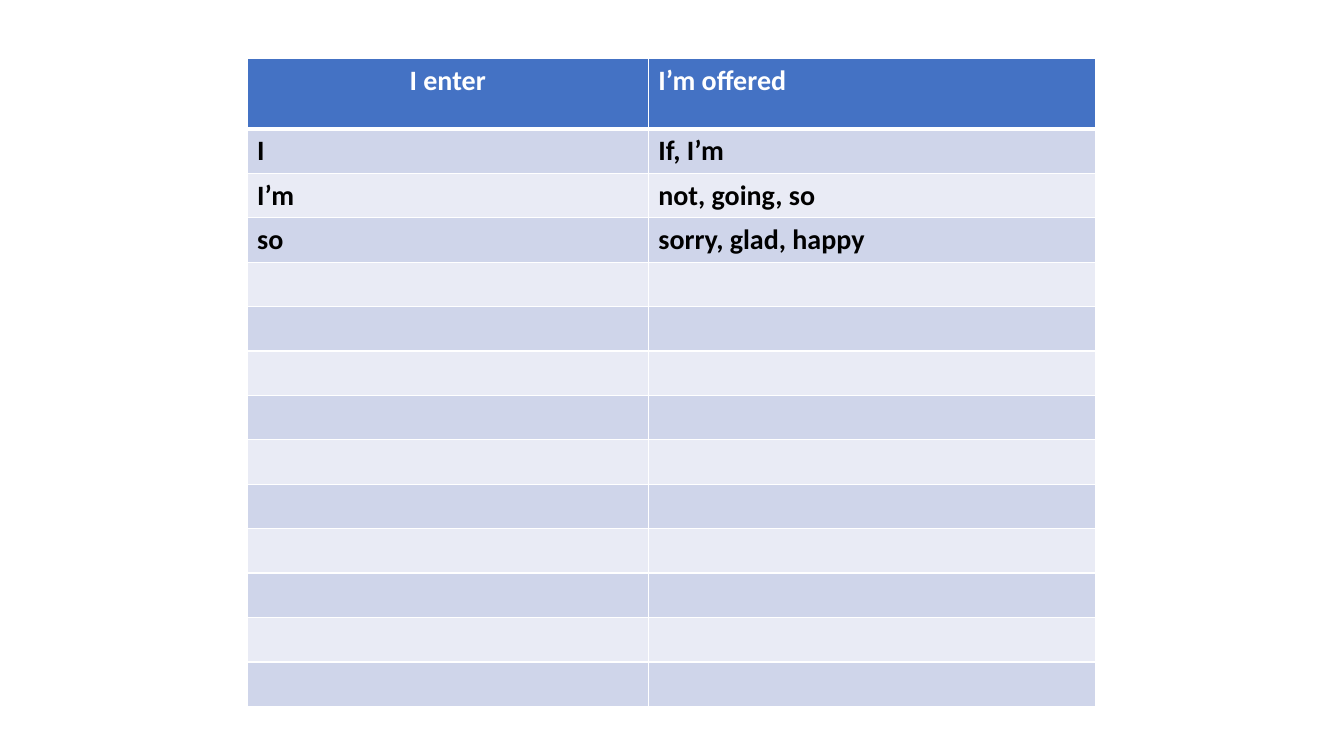
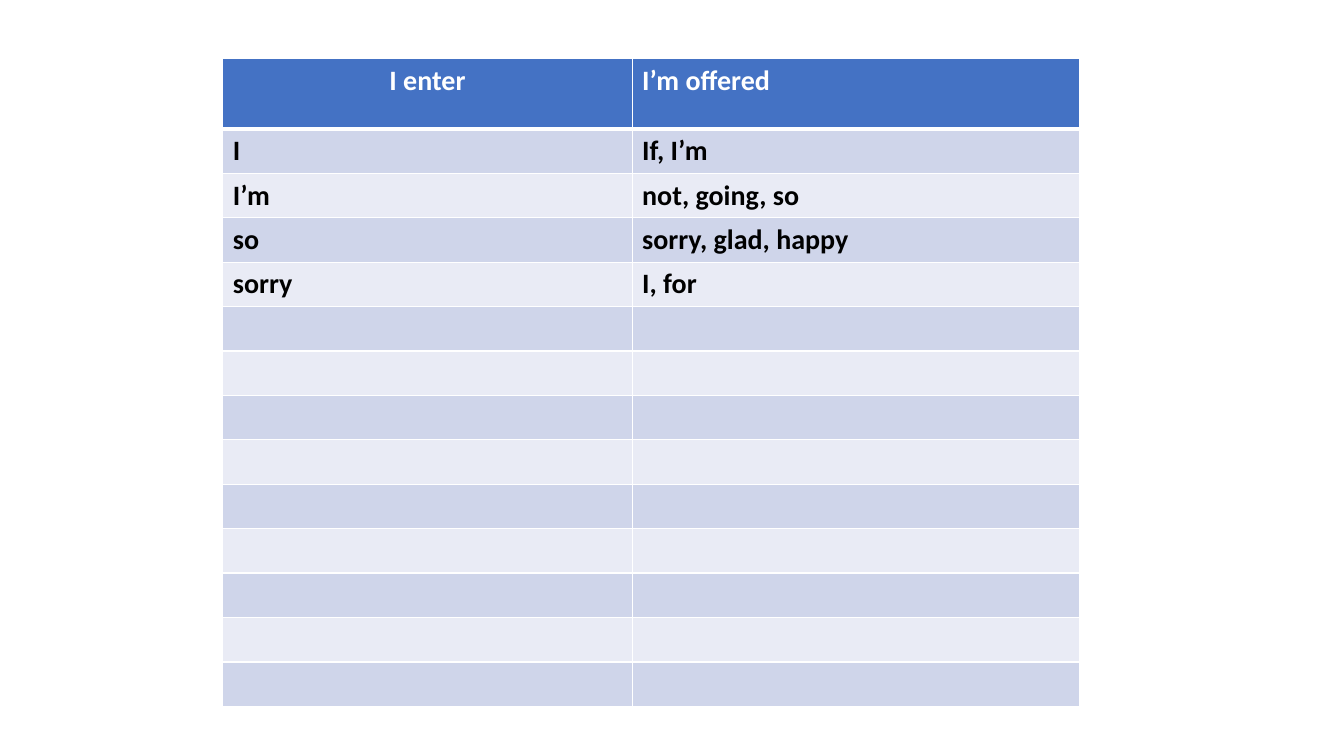
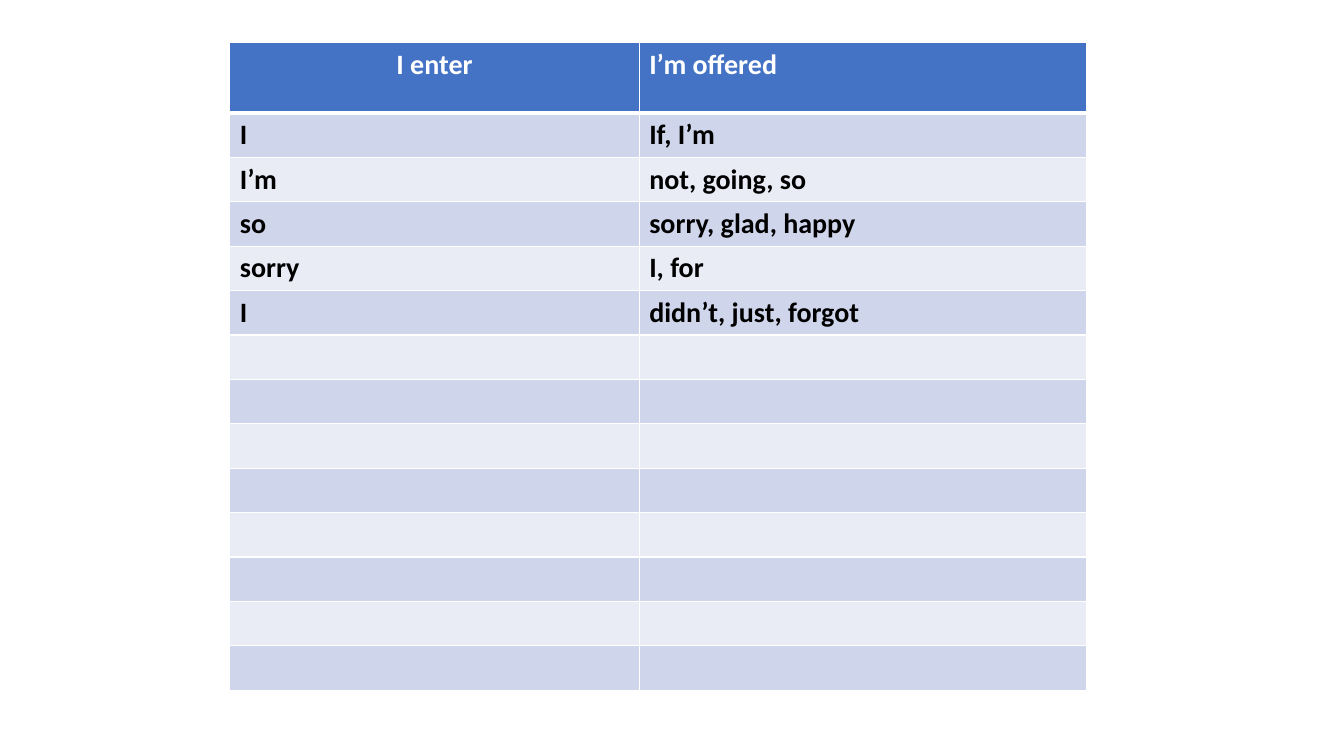
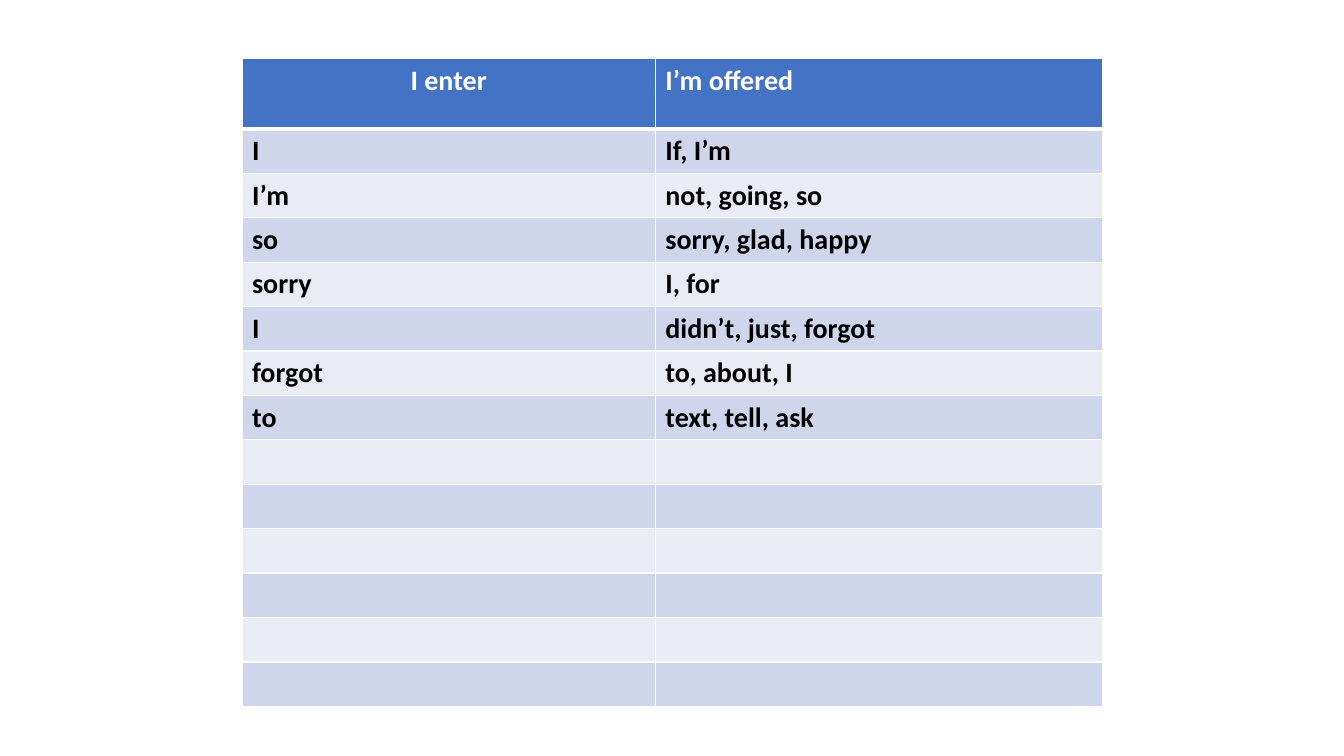
from typing import NamedTuple

import lxml.etree
import pptx
import pptx.dml.color
import pptx.enum.text
import pptx.oxml.ns
import pptx.presentation
import pptx.table
import pptx.util

RGBColor = pptx.dml.color.RGBColor
Inches = pptx.util.Inches

WHITE = RGBColor(0xFF, 0xFF, 0xFF)
BLACK = RGBColor(0x00, 0x00, 0x00)
BLUE = RGBColor(0x44, 0x72, 0xC4)
DARK_BAND = RGBColor(0xCF, 0xD5, 0xEA)
LIGHT_BAND = RGBColor(0xE9, 0xEB, 0xF5)

FONT = "Calibri"
FONT_SIZE = pptx.util.Pt(20)
THIN = pptx.util.Pt(1)
THICK = pptx.util.Pt(3)
BODY_ROWS = 13
HEADER_HEIGHT = Inches(0.7)
ROW_HEIGHT = Inches(0.44)
OFFERED_WIDTH = Inches(4.44)
BLANK_LAYOUT = 6


class Entry(NamedTuple):
    entered: str
    offered: str


class WordTable(NamedTuple):
    left: float
    top: float
    enter_width: float
    filled: int


HEADER = Entry("I enter", "I’m offered")
EMPTY = Entry("", "")
ENTRIES = [
    Entry("I", "If, I’m"),
    Entry("I’m", "not, going, so"),
    Entry("so", "sorry, glad, happy"),
    Entry("sorry", "I, for"),
    Entry("I", "didn’t, just, forgot"),
    Entry("forgot", "to, about, I"),
    Entry("to", "text, tell, ask"),
]
WORD_TABLES = [
    WordTable(2.45, 0.58, 3.98, 3),
    WordTable(2.21, 0.58, 4.06, 4),
    WordTable(2.28, 0.42, 4.06, 5),
    WordTable(2.4, 0.58, 4.1, 7),
]


def set_borders(cell: pptx.table._Cell, top: int, bottom: int) -> None:
    qn = pptx.oxml.ns.qn
    tc_pr = cell._tc.get_or_add_tcPr()
    widths = {"a:lnL": THIN, "a:lnR": THIN, "a:lnT": top, "a:lnB": bottom}
    for tag, width in widths.items():
        ln = lxml.etree.SubElement(tc_pr, qn(tag), w=str(int(width)))
        fill = lxml.etree.SubElement(ln, qn("a:solidFill"))
        lxml.etree.SubElement(fill, qn("a:srgbClr"), val=str(WHITE))


def fill_cell(cell: pptx.table._Cell, text: str, row: int) -> None:
    is_header = row == 0
    set_borders(cell, THICK if row == 1 else THIN, THICK if is_header else THIN)
    cell.fill.solid()
    band = DARK_BAND if row % 2 else LIGHT_BAND
    cell.fill.fore_color.rgb = BLUE if is_header else band
    p = cell.text_frame.paragraphs[0]
    p.font.name = FONT
    p.font.size = FONT_SIZE
    p.font.bold = True
    p.font.color.rgb = WHITE if is_header else BLACK
    if text:
        p.add_run().text = text


def add_word_slide(prs: pptx.presentation.Presentation, spec_table: WordTable) -> None:
    s = prs.slides.add_slide(prs.slide_layouts[BLANK_LAYOUT])
    enter_width = Inches(spec_table.enter_width)
    table = s.shapes.add_table(
        BODY_ROWS + 1, 2,
        Inches(spec_table.left), Inches(spec_table.top),
        enter_width + OFFERED_WIDTH, HEADER_HEIGHT + BODY_ROWS * ROW_HEIGHT,
    ).table
    table.columns[0].width = enter_width
    table.columns[1].width = OFFERED_WIDTH
    blanks = [EMPTY] * (BODY_ROWS - spec_table.filled)
    for row, entry in enumerate([HEADER, *ENTRIES[:spec_table.filled], *blanks]):
        table.rows[row].height = ROW_HEIGHT if row else HEADER_HEIGHT
        for col, text in enumerate(entry):
            fill_cell(table.cell(row, col), text, row)
    p = table.cell(0, 0).text_frame.paragraphs[0]
    p.alignment = pptx.enum.text.PP_ALIGN.CENTER


def main() -> None:
    prs = pptx.Presentation()
    prs.slide_width = Inches(13.33)
    prs.slide_height = Inches(7.5)
    for word_table in WORD_TABLES:
        add_word_slide(prs, word_table)
    prs.save("out.pptx")


if __name__ == "__main__":
    main()
